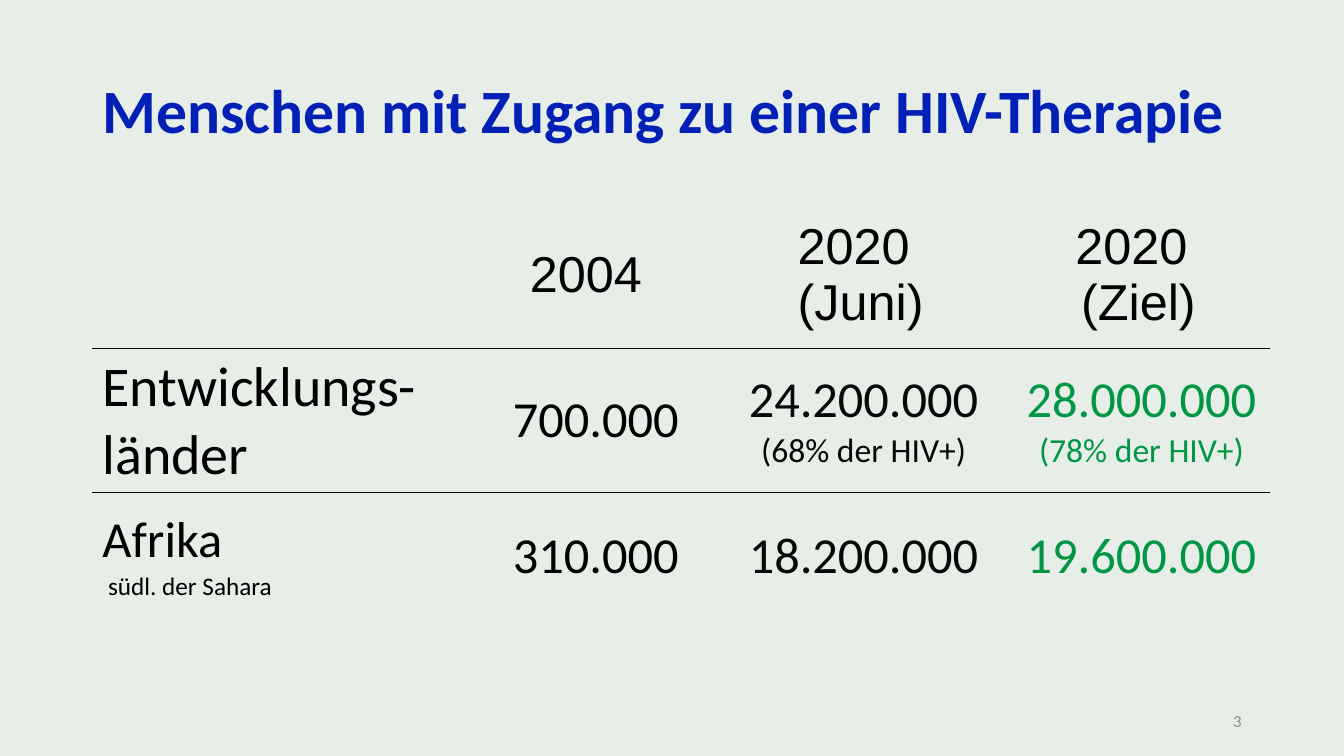
from lxml.etree import SubElement
from pptx import Presentation
from pptx.dml.color import RGBColor
from pptx.enum.text import MSO_ANCHOR, PP_ALIGN
from pptx.oxml.ns import qn
from pptx.util import Pt

COLORS = {
    "background": "E6EEE7",
    "title": "0220B6",
    "text": "000000",
    "current": "080808",
    "target": "009644",
    "number": "8C8C8C",
}
PLAIN_TABLE_STYLE = "{2D5ABB26-0587-4C30-8999-92F81FD0307C}"
VALUE_INDENT = 14.4
COLUMN_WIDTHS = [260.5, 184, 198.5, 198.5]
ROW_HEIGHTS = [104.8, 98.6, 90]

THERAPY_ROWS = [
    [[], [("2004", 36)], [("2020", 36), (" (Juni)", 36)], [("2020", 36), (" (Ziel)", 36)]],
    [
        [("Entwicklungs-länder", 40)],
        [("700.000", 36)],
        [("24.200.000", 36), ("(68% der HIV+)", 24)],
        [("28.000.000", 36), ("(78% der HIV+)", 24)],
    ],
    [
        [("Afrika", 36), (" südl. der Sahara", 18)],
        [("310.000", 36)],
        [("18.200.000", 36)],
        [("19.600.000", 36)],
    ],
]


def write_lines(text_frame, lines, color, font_name="Calibri", bold=False, **paragraph_format):
    for index, (text, size) in enumerate(lines):
        paragraph = text_frame.add_paragraph() if index else text_frame.paragraphs[0]
        for name, value in paragraph_format.items():
            setattr(paragraph, name, value)
        run = paragraph.add_run()
        run.text = text
        for name, value in {"name": font_name, "size": Pt(size), "bold": bold}.items():
            setattr(run.font, name, value)
        run.font.color.rgb = RGBColor.from_string(COLORS[color])


def add_text(slide, box, lines, color, **text_format):
    text_frame = slide.shapes.add_textbox(*map(Pt, box)).text_frame
    text_frame.word_wrap = True
    text_frame.vertical_anchor = MSO_ANCHOR.MIDDLE
    write_lines(text_frame, lines, color, **text_format)


def add_border(cell, edge):
    properties = cell._tc.get_or_add_tcPr()
    line = SubElement(properties, qn(f"a:{edge}"), w=str(Pt(1)))
    fill = SubElement(line, qn("a:solidFill"))
    SubElement(fill, qn("a:srgbClr"), val=COLORS["text"])
    properties.insert(0, line)


def fill_cell(cell, lines, row, column):
    cell.fill.background()
    cell.vertical_anchor = MSO_ANCHOR.MIDDLE
    is_header, is_label = row == 0, column == 0
    color = "text" if is_header else ["text", "text", "current", "target"][column]
    write_lines(
        cell.text_frame,
        lines,
        color,
        font_name="Arial" if is_header else "Calibri",
        alignment=PP_ALIGN.LEFT if is_label else PP_ALIGN.CENTER,
    )
    if not is_header and not is_label:
        for paragraph in cell.text_frame.paragraphs:
            properties = paragraph._p.get_or_add_pPr()
            properties.set("marL", str(Pt(VALUE_INDENT)))
            properties.set("indent", "0")
    if row < len(THERAPY_ROWS) - 1:
        add_border(cell, "lnB")
    if row > 0:
        add_border(cell, "lnT")


def add_therapy_table(slide, left, top):
    table = slide.shapes.add_table(
        len(ROW_HEIGHTS), len(COLUMN_WIDTHS), Pt(left), Pt(top),
        Pt(sum(COLUMN_WIDTHS)), Pt(sum(ROW_HEIGHTS)),
    ).table
    table.first_row = table.horz_banding = False
    table._tbl.tblPr.find(qn("a:tableStyleId")).text = PLAIN_TABLE_STYLE
    for column, width in zip(table.columns, COLUMN_WIDTHS):
        column.width = Pt(width)
    for row, height in zip(table.rows, ROW_HEIGHTS):
        row.height = Pt(height)
    for row, cells in enumerate(THERAPY_ROWS):
        for column, lines in enumerate(cells):
            fill_cell(table.cell(row, column), lines, row, column)


def build_therapy_slide(presentation):
    slide = presentation.slides.add_slide(presentation.slide_layouts[6])
    background = slide.background.fill
    background.solid()
    background.fore_color.rgb = RGBColor.from_string(COLORS["background"])
    add_text(
        slide, (66, 28.8, 828, 104.4),
        [("Menschen mit Zugang zu einer HIV-Therapie", 44)],
        "title", bold=True, line_spacing=0.9,
    )
    add_therapy_table(slide, 66, 144)
    add_text(slide, (678, 500.4, 216, 28.8), [("3", 12)], "number", alignment=PP_ALIGN.RIGHT)


def main():
    presentation = Presentation()
    presentation.slide_width = Pt(960)
    presentation.slide_height = Pt(540)
    build_therapy_slide(presentation)
    presentation.save("out.pptx")


if __name__ == "__main__":
    main()
